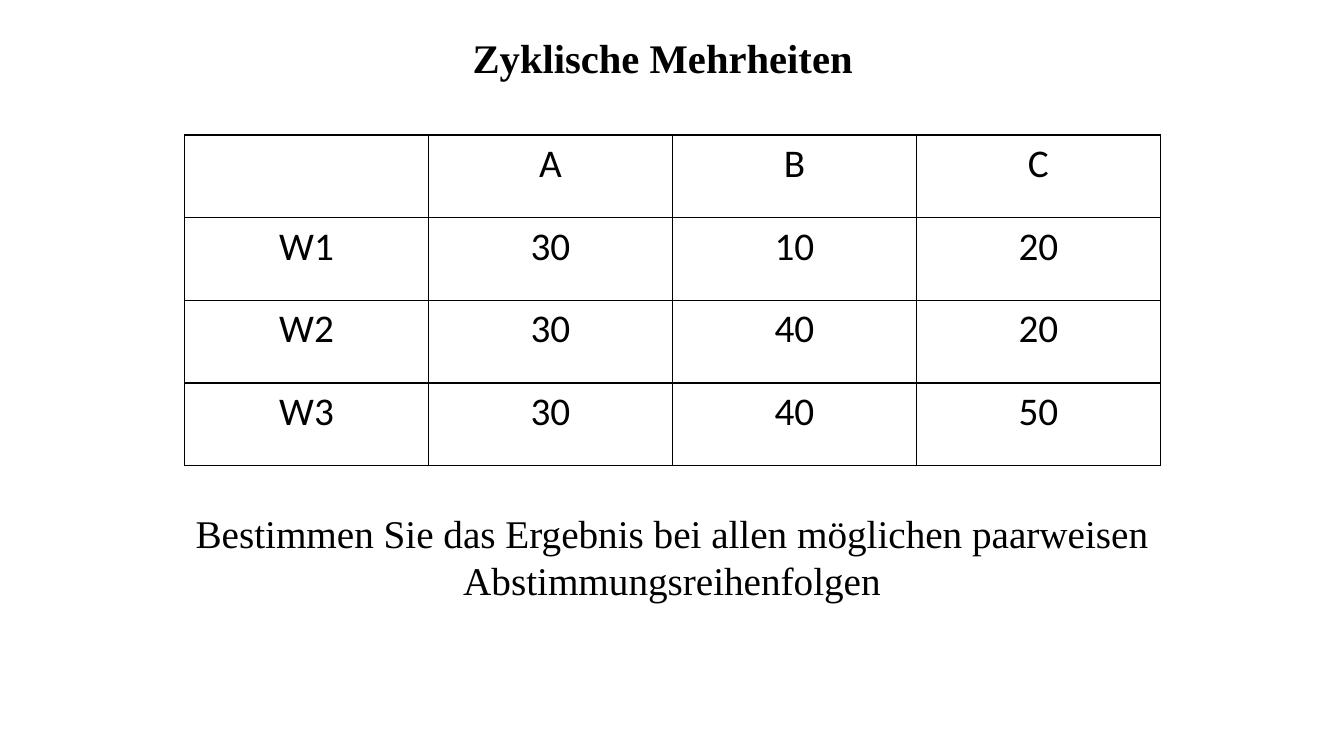
"""Build the slide on cyclic majorities with its table of valuations."""
from dataclasses import dataclass

import lxml.etree
import pptx
import pptx.dml.color
import pptx.enum.text
import pptx.oxml.ns
import pptx.util

EMU_PER_PX = 9144
BLACK = "000000"
WHITE = "FFFFFF"
SERIF = "Times New Roman"
SANS = "Calibri"
COL_W, ROW_H = 242, 82
VALUES = [
    ["", "A", "B", "C"],
    ["W1", "30", "10", "20"],
    ["W2", "30", "40", "20"],
    ["W3", "30", "40", "50"],
]


@dataclass
class Box:
    left: int
    top: int
    width: int
    height: int

    def emu(self) -> list[int]:
        return [px(v) for v in (self.left, self.top, self.width, self.height)]


TITLE = Box(242, 16, 831, 81)
TABLE = Box(183, 134, COL_W * len(VALUES[0]), ROW_H * len(VALUES))
TASK = Box(6, 500, 1321, 233)


def px(value: int) -> int:
    return pptx.util.Emu(value * EMU_PER_PX)


def color(value: str) -> pptx.dml.color.RGBColor:
    return pptx.dml.color.RGBColor.from_string(value)


def write(tf, text: str, **fmt) -> None:
    p = tf.paragraphs[0]
    p.alignment = pptx.enum.text.PP_ALIGN.CENTER
    r = p.add_run()
    r.text = text
    for name, value in fmt.items():
        setattr(r.font, name, value)
    r.font.color.rgb = color(BLACK)


def add_borders(cell) -> None:
    tc_pr = cell._tc.get_or_add_tcPr()
    qn = pptx.oxml.ns.qn
    for i, side in enumerate(("lnL", "lnR", "lnT", "lnB")):
        ln = lxml.etree.Element(qn(f"a:{side}"), w=str(pptx.util.Pt(1)))
        fill = lxml.etree.SubElement(ln, qn("a:solidFill"))
        lxml.etree.SubElement(fill, qn("a:srgbClr"), val=BLACK)
        tc_pr.insert(i, ln)


def add_title(s) -> None:
    sp = s.shapes.title
    sp.left, sp.top, sp.width, sp.height = TITLE.emu()
    tf = sp.text_frame
    frame = {
        "word_wrap": True,
        "auto_size": pptx.enum.text.MSO_AUTO_SIZE.NONE,
        "vertical_anchor": pptx.enum.text.MSO_ANCHOR.MIDDLE,
        "margin_left": px(9),
        "margin_right": px(9),
        "margin_top": px(4),
        "margin_bottom": px(4),
    }
    for name, value in frame.items():
        setattr(tf, name, value)
    write(tf, "Zyklische Mehrheiten", name=SERIF, size=pptx.util.Pt(29), bold=True)


def add_values(s) -> None:
    table = s.shapes.add_table(len(VALUES), len(VALUES[0]), *TABLE.emu()).table
    table.first_row = table.horz_banding = False
    for row, texts in zip(table.rows, VALUES):
        for cell, text in zip(row.cells, texts):
            cell.fill.solid()
            cell.fill.fore_color.rgb = color(WHITE)
            add_borders(cell)
            if text:
                write(cell.text_frame, text, name=SANS, size=pptx.util.Pt(28))


def add_task(s) -> None:
    tf = s.shapes.add_textbox(*TASK.emu()).text_frame
    tf.word_wrap = True
    text = "Bestimmen Sie das Ergebnis bei allen möglichen paarweisen Abstimmungsreihenfolgen"
    write(tf, text, name=SERIF, size=pptx.util.Pt(28))


def main() -> None:
    prs = pptx.Presentation()
    prs.slide_width, prs.slide_height = px(1333), px(750)
    s = prs.slides.add_slide(prs.slide_layouts[5])
    add_title(s)
    add_task(s)
    add_values(s)
    prs.save("out.pptx")


if __name__ == "__main__":
    main()
